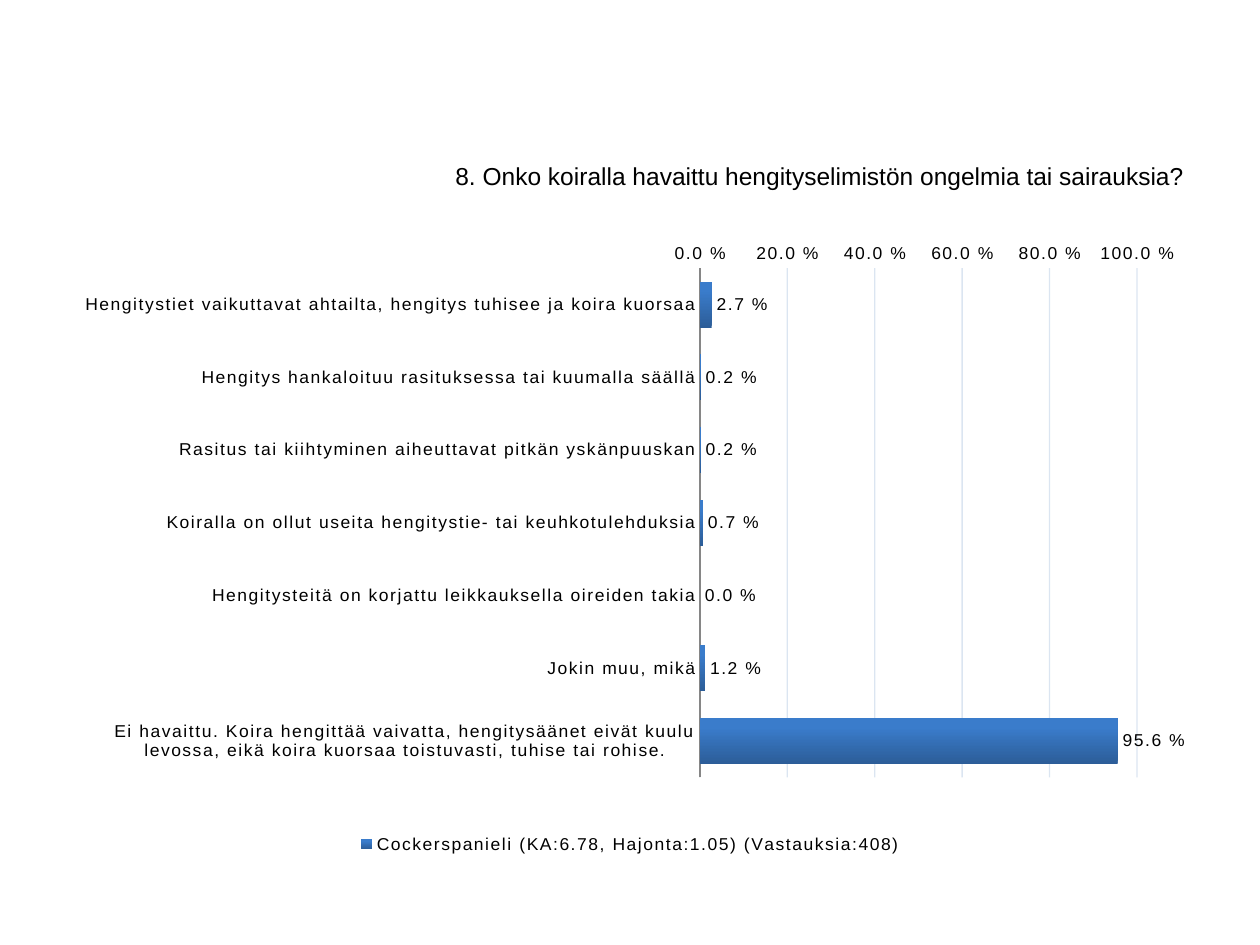
from lxml import etree
from pptx import Presentation
from pptx.chart.data import CategoryChartData
from pptx.dml.color import RGBColor
from pptx.enum.chart import (XL_AXIS_CROSSES as Crosses, XL_CHART_TYPE as ChartType,
                             XL_LABEL_POSITION as LabelPos, XL_LEGEND_POSITION as LegendPos,
                             XL_TICK_MARK as Tick)
from pptx.enum.text import PP_ALIGN as Align
from pptx.oxml import parse_xml
from pptx.oxml.ns import nsdecls, qn
from pptx.util import Emu, Pt

PX = 914400 // 126
BLACK = RGBColor(0x00, 0x00, 0x00)
GREY = RGBColor(0x86, 0x86, 0x86)
GRID_BLUE = RGBColor(0x4F, 0x81, 0xBD)
BAR_DARK = RGBColor(0x2C, 0x5D, 0x98)
BAR_LIGHT = RGBColor(0x3A, 0x7C, 0xCB)
PERCENT = r"0.0\ %"

QUESTION = "8. Onko koiralla havaittu hengityselimistön ongelmia tai sairauksia?"
SERIES = "Cockerspanieli (KA:6.78, Hajonta:1.05) (Vastauksia:408)"
ANSWERS = {
    "Hengitystiet vaikuttavat ahtailta, hengitys tuhisee ja koira kuorsaa": 0.027,
    "Hengitys hankaloituu rasituksessa tai kuumalla säällä": 0.002,
    "Rasitus tai kiihtyminen aiheuttavat pitkän yskänpuuskan": 0.002,
    "Koiralla on ollut useita hengitystie- tai keuhkotulehduksia": 0.007,
    "Hengitysteitä on korjattu leikkauksella oireiden takia": 0,
    "Jokin muu, mikä": 0.012,
    "Ei havaittu. Koira hengittää vaivatta, hengitysäänet eivät kuulu levossa, "
    "eikä koira kuorsaa toistuvasti, tuhise tai rohise.": 0.956,
}


class SlideBuilder:
    def __init__(self, prs, font="Arial"):
        self.s = prs.slides.add_slide(prs.slide_layouts[6])
        self.font = font

    def style(self, font, size):
        font.name, font.size = self.font, Pt(size)
        font.color.rgb = BLACK

    def chart_style(self, font):
        """Chart text is 10 pt with letters spaced one point apart."""
        self.style(font, 10)
        font._element.set("spc", "100")

    def heading(self, text, *box):
        tf = self.s.shapes.add_textbox(*(Emu(n * PX) for n in box)).text_frame
        tf.word_wrap = True
        p = tf.paragraphs[0]
        p.text, p.alignment = text, Align.RIGHT
        self.style(p.runs[0].font, 14)

    def bar_chart(self, name, values, box, plot):
        data = CategoryChartData(number_format=PERCENT)
        data.categories = list(values)
        data.add_series(name, list(values.values()))
        frame = self.s.shapes.add_chart(ChartType.BAR_CLUSTERED, *(Emu(n * PX) for n in box), data)
        chart = frame.chart
        chart.has_title = False
        self.chart_style(chart.font)
        self.bars(chart.plots[0])
        self.axes(chart.category_axis, chart.value_axis)
        chart.has_legend = True
        chart.legend.position = LegendPos.BOTTOM
        chart.legend.include_in_layout = False
        self.chart_style(chart.legend.font)
        self.place_plot(chart, box, plot)

    def bars(self, plot):
        plot.gap_width = 58
        plot.vary_by_categories = False
        fill = plot.series[0].format.fill
        fill.gradient()
        fill.gradient_angle = 90
        for stop, color, position in zip(fill.gradient_stops, (BAR_DARK, BAR_LIGHT), (0, 0.8)):
            stop.color.rgb, stop.position = color, position
        plot.has_data_labels = True
        labels = plot.data_labels
        labels.show_value = True
        labels.position = LabelPos.OUTSIDE_END
        labels.number_format, labels.number_format_is_linked = PERCENT, False
        self.chart_style(labels.font)

    def axes(self, cat, val):
        for axis in (cat, val):
            axis.major_tick_mark = axis.minor_tick_mark = Tick.NONE
            self.chart_style(axis.tick_labels.font)
        cat.reverse_order = True
        cat.crosses = Crosses.MAXIMUM
        cat.format.line.color.rgb = GREY
        val.minimum_scale, val.maximum_scale, val.major_unit = 0, 1, 0.2
        val.tick_labels.number_format = PERCENT
        val.tick_labels.number_format_is_linked = False
        val.format.line.fill.background()
        grid = val.major_gridlines.format.line
        grid.color.rgb, grid.width = GRID_BLUE, Pt(0.75)
        for color in val.major_gridlines._xAx.find(qn("c:majorGridlines")).iter(qn("a:srgbClr")):
            etree.SubElement(color, qn("a:alpha")).set("val", "20000")

    def place_plot(self, chart, box, plot):
        """Fix the inner plot area at slide position plot."""
        x, y, w, h = box
        left, top, width, height = plot
        parts = {"x": (left - x) / w, "y": (top - y) / h, "w": width / w, "h": height / h}
        sizes = "".join(f'<c:{k} val="{v:.4f}"/>' for k, v in parts.items())
        layout = parse_xml(
            f'<c:layout {nsdecls("c")}><c:manualLayout><c:layoutTarget val="inner"/>'
            f'<c:xMode val="edge"/><c:yMode val="edge"/>{sizes}</c:manualLayout></c:layout>')
        area = chart._chartSpace.find(".//" + qn("c:plotArea"))
        for old in area.findall(qn("c:layout")):
            area.remove(old)
        area.insert(0, layout)


def main():
    prs = Presentation()
    prs.slide_width, prs.slide_height = Emu(1260 * PX), Emu(945 * PX)
    slide = SlideBuilder(prs)
    slide.heading(QUESTION, 63, 155, 1134, 74)
    slide.bar_chart(SERIES, ANSWERS, box=(63, 244, 1134, 615), plot=(700, 257, 437, 519))
    prs.save("out.pptx")


if __name__ == "__main__":
    main()
